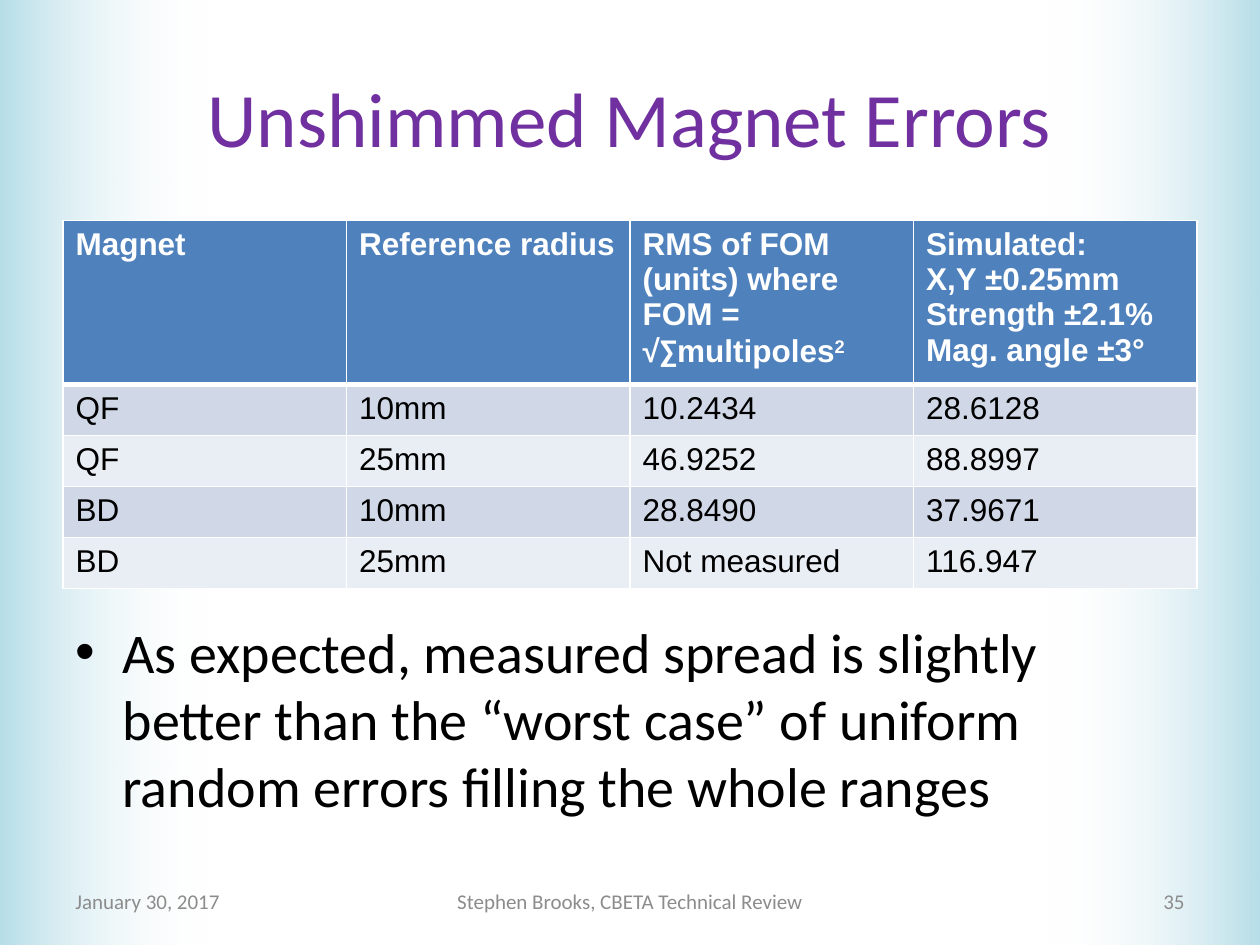
from lxml.etree import SubElement
from pptx import Presentation
from pptx.dml.color import RGBColor
from pptx.enum.shapes import MSO_SHAPE
from pptx.enum.text import MSO_ANCHOR, PP_ALIGN
from pptx.oxml.ns import qn
from pptx.util import Pt

WHITE = RGBColor(0xFF, 0xFF, 0xFF)
BLACK = RGBColor(0, 0, 0)
AQUA = RGBColor(0xB7, 0xDE, 0xE8)
PURPLE = RGBColor(0x70, 0x30, 0xA0)
BLUE = RGBColor(0x4F, 0x81, 0xBD)
BANDS = RGBColor(0xD0, 0xD8, 0xE8), RGBColor(0xE9, 0xED, 0xF4)
GRAY = RGBColor(0x8C, 0x8C, 0x8C)

WIDE, HIGH, EDGE = 720, 540, 36

HEADS = [
    "Magnet",
    "Reference radius",
    "RMS of FOM (units) where FOM = √",
    "Simulated:\nX,Y ±0.25mm\nStrength ±2.1%\nMag. angle ±3°",
]
ROWS = [
    ["QF", "10mm", "10.2434", "28.6128"],
    ["QF", "25mm", "46.9252", "88.8997"],
    ["BD", "10mm", "28.8490", "37.9671"],
    ["BD", "25mm", "Not measured", "116.947"],
]
POINT = ("As expected, measured spread is slightly better than the “worst case” "
         "of uniform random errors filling the whole ranges")


def style(para, size, color, face="Calibri", bold=False):
    font = para.font
    font.size, font.name, font.bold = Pt(size), face, bold
    font.color.rgb = color


def add_text(slide, box, text, size, color, align=PP_ALIGN.LEFT, anchor=MSO_ANCHOR.MIDDLE):
    frame = slide.shapes.add_textbox(*map(Pt, box)).text_frame
    frame.word_wrap = True
    frame.vertical_anchor = anchor
    para = frame.paragraphs[0]
    para.text, para.alignment = text, align
    style(para, size, color)
    return para


def add_glow(slide, box, turn):
    """Side band that fades from aqua to clear, turned by the given angle."""
    band = slide.shapes.add_shape(MSO_SHAPE.RECTANGLE, *map(Pt, box))
    band.shadow.inherit = False
    band.rotation = turn
    band.line.fill.background()
    band.fill.gradient()
    band.fill.gradient_angle = 0
    for stop, color, spot in zip(band.fill.gradient_stops, (AQUA, WHITE), (0, 1)):
        stop.color.rgb, stop.position = color, spot
    last = list(band._element.iter(qn("a:srgbClr")))[-1]
    SubElement(last, qn("a:alpha"), val="0")


def add_border(cell, base):
    """White lines round a cell; base is the width of the bottom one."""
    props = cell._tc.get_or_add_tcPr()
    for spot, (side, width) in enumerate(zip("LRTB", (1, 1, 1, base))):
        line = SubElement(props, qn(f"a:ln{side}"), w=str(Pt(width)))
        fill = SubElement(line, qn("a:solidFill"))
        SubElement(fill, qn("a:srgbClr"), val=str(WHITE))
        props.insert(spot, line)


def add_grid(slide, box, head, step):
    """Table with a header row of height head and body rows of height step."""
    table = slide.shapes.add_table(len(ROWS) + 1, len(HEADS), *map(Pt, box)).table
    for col in table.columns:
        col.width = Pt(box[2] / len(HEADS))
    for r, texts in enumerate([HEADS] + ROWS):
        top = r == 0
        table.rows[r].height = Pt(head if top else step)
        for c, text in enumerate(texts):
            cell = table.cell(r, c)
            cell.text = text
            cell.fill.solid()
            cell.fill.fore_color.rgb = BLUE if top else BANDS[(r - 1) % 2]
            add_border(cell, 3 if top else 1)
            for para in cell.text_frame.paragraphs:
                style(para, 18, WHITE if top else BLACK, "Arial", top)
    add_sum(table.cell(0, 2).text_frame.paragraphs[0])


def add_sum(para):
    """Finish the formula: sum sign, term and raised 2."""
    for text in ("∑", "multipoles", "2"):
        run = para.add_run()
        run.text = text
        if text == "∑":
            run.font.name = "Calibri"
    run._r.get_or_add_rPr().set("baseline", "30000")


def add_point(slide, box):
    para = add_text(slide, box, POINT, 32, BLACK, anchor=MSO_ANCHOR.TOP)
    para.space_before = Pt(6.4)
    props = para._p.get_or_add_pPr()
    props.set("marL", str(Pt(27)))
    props.set("indent", str(Pt(-27)))
    SubElement(props, qn("a:buFont"), typeface="Arial")
    SubElement(props, qn("a:buChar"), char="•")
    props.append(props.find(qn("a:defRPr")))


def add_foot(slide, box):
    left, top, width, height = box
    side, mid = 168, 228
    add_text(slide, (left, top, side, height), "January 30, 2017", 12, GRAY)
    add_text(slide, (left + (width - mid) / 2, top, mid, height),
             "Stephen Brooks, CBETA Technical Review", 12, GRAY, PP_ALIGN.CENTER)
    add_text(slide, (left + width - side, top, side, height), "35", 12, GRAY, PP_ALIGN.RIGHT)


def main():
    deck = Presentation()
    deck.slide_width, deck.slide_height = Pt(WIDE), Pt(HIGH)
    slide = deck.slides.add_slide(deck.slide_layouts[6])
    slide.background.fill.solid()
    slide.background.fill.fore_color.rgb = WHITE
    glow, span = 122, WIDE - 2 * EDGE
    add_glow(slide, (WIDE - glow, 0, glow, HIGH), 180)
    add_glow(slide, (0, 0, glow, HIGH), 0)
    add_text(slide, (EDGE, 21.6, span, 90), "Unshimmed Magnet Errors", 44, PURPLE,
             PP_ALIGN.CENTER)
    add_grid(slide, (EDGE, 126, span, 206.3), 89.5, 29.2)
    add_foot(slide, (EDGE, 500.5, span, 28.75))
    add_point(slide, (EDGE, 349.2, span, 133.2))
    deck.save("out.pptx")


if __name__ == "__main__":
    main()
